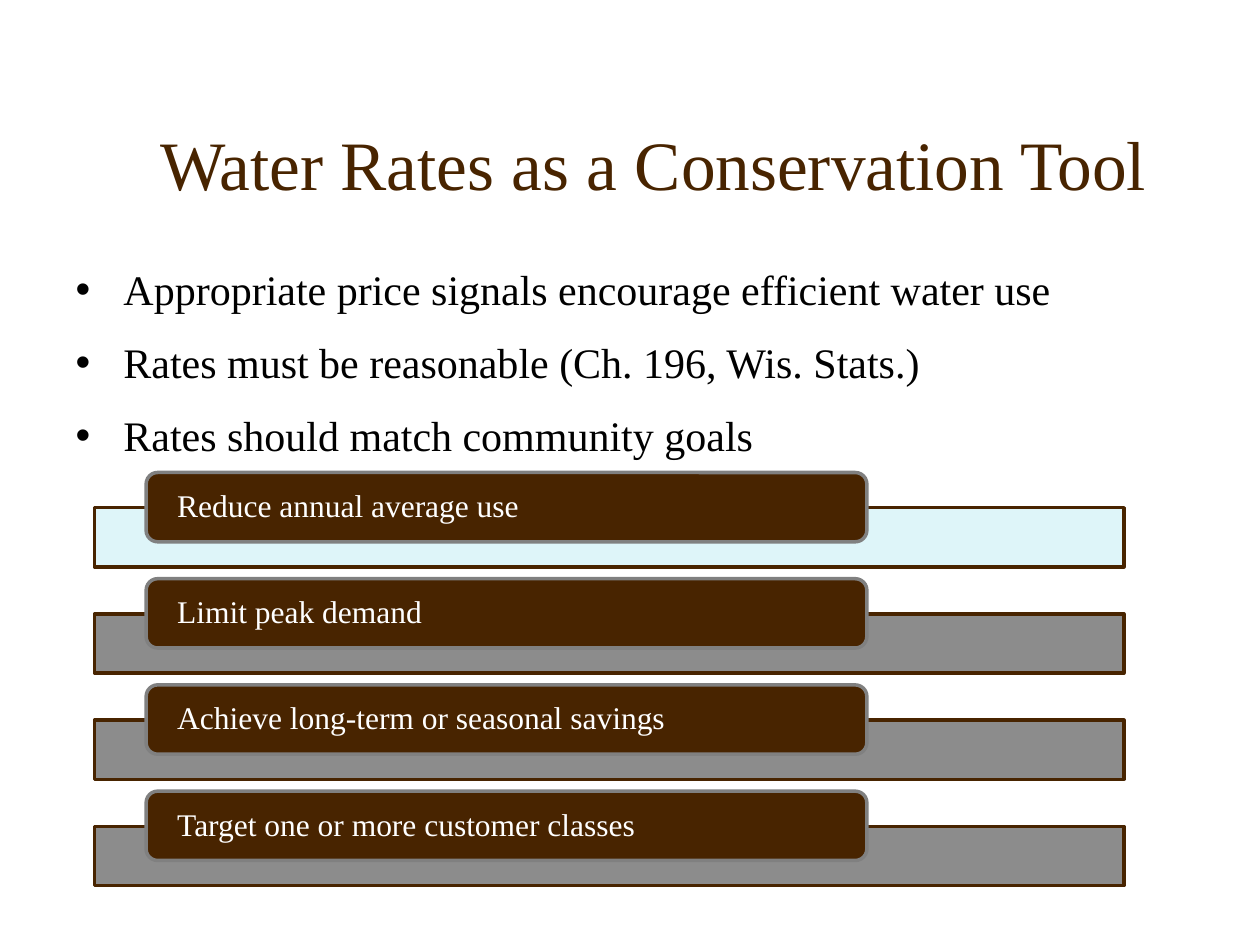
"""Build the slide on water rates as a conservation tool."""
from dataclasses import dataclass

from lxml.etree import SubElement
from pptx import Presentation
from pptx.dml.color import RGBColor
from pptx.enum.shapes import MSO_SHAPE
from pptx.enum.text import MSO_ANCHOR, MSO_AUTO_SIZE, PP_ALIGN
from pptx.oxml.ns import qn
from pptx.util import Inches, Pt

BROWN = RGBColor(0x48, 0x24, 0x00)
GRAY = RGBColor(0x80, 0x80, 0x80)
AQUA = RGBColor(0xDB, 0xF5, 0xF9)
BLACK = RGBColor(0x00, 0x00, 0x00)
WHITE = RGBColor(0xFF, 0xFF, 0xFF)
FONT = "Times New Roman"
PITCH = 0.843
INDENT = Inches(0.38)


@dataclass
class Goal:
    text: str
    bar_color: RGBColor = GRAY


BULLETS = [
    "Appropriate price signals encourage efficient water use",
    "Rates must be reasonable (Ch. 196, Wis. Stats.)",
    "Rates should match community goals",
]
GOALS = [
    Goal("Reduce annual average use", AQUA),
    Goal("Limit peak demand"),
    Goal("Achieve long-term or seasonal savings"),
    Goal("Target one or more customer classes"),
]


def place(sp, left: float, top: float, width: float, height: float) -> None:
    sp.left, sp.top = Inches(left), Inches(top)
    sp.width, sp.height = Inches(width), Inches(height)


def write(tf, *lines: str, size: float, color: RGBColor, anchor=MSO_ANCHOR.TOP,
          gap: float = 0, line_spacing: float = 1.0, bullet: bool = False) -> None:
    tf.word_wrap = True
    tf.auto_size = MSO_AUTO_SIZE.NONE
    tf.vertical_anchor = anchor
    for i, line in enumerate(lines):
        p = tf.add_paragraph() if i else tf.paragraphs[0]
        p.alignment = PP_ALIGN.LEFT
        p.line_spacing = line_spacing
        p.space_before = Pt(gap if i else 0)
        if bullet:
            pPr = p._p.get_or_add_pPr()
            pPr.set("marL", str(INDENT))
            pPr.set("indent", str(-INDENT))
            SubElement(pPr, qn("a:buChar")).set("char", "•")
        r = p.add_run()
        r.text = line
        r.font.name, r.font.size = FONT, Pt(size)
        r.font.color.rgb = color


def add_box(slide, kind: MSO_SHAPE, box: tuple, fill: RGBColor, line: RGBColor):
    sp = slide.shapes.add_shape(kind, *map(Inches, box))
    sp.shadow.inherit = False
    sp.fill.solid()
    sp.fill.fore_color.rgb = fill
    sp.line.color.rgb = line
    sp.line.width = Pt(2)
    return sp


def add_goal(slide, goal: Goal, top: float) -> None:
    bar = add_box(slide, MSO_SHAPE.RECTANGLE, (0.75, top + 0.28, 8.17, 0.47),
                  goal.bar_color, BROWN)
    clr = bar.fill._xPr.find(qn("a:solidFill"))[0]
    SubElement(clr, qn("a:alpha")).set("val", "90000")
    label = add_box(slide, MSO_SHAPE.ROUNDED_RECTANGLE, (1.16, top, 5.72, 0.55),
                    BROWN, GRAY)
    tf = label.text_frame
    tf.margin_left = tf.margin_right = Inches(0.22)
    tf.margin_top = tf.margin_bottom = 0
    write(tf, goal.text, size=18, color=WHITE, anchor=MSO_ANCHOR.MIDDLE,
          line_spacing=0.9)


def main() -> None:
    prs = Presentation()
    prs.slide_width, prs.slide_height = Inches(10), Inches(7.5)
    slide = prs.slides.add_slide(prs.slide_layouts[1])
    title, body = slide.placeholders
    place(title, 1.17, 0.42, 8.5, 1.25)
    write(title.text_frame, "Water Rates as a Conservation Tool", size=39.6,
          color=BROWN, anchor=MSO_ANCHOR.BOTTOM)
    place(body, 0.5, 2.04, 9, 1.83)
    write(body.text_frame, *BULLETS, size=24, color=BLACK, gap=13, bullet=True)
    for i, goal in enumerate(GOALS):
        add_goal(slide, goal, 3.75 + i * PITCH)
    prs.save("out.pptx")


if __name__ == "__main__":
    main()
